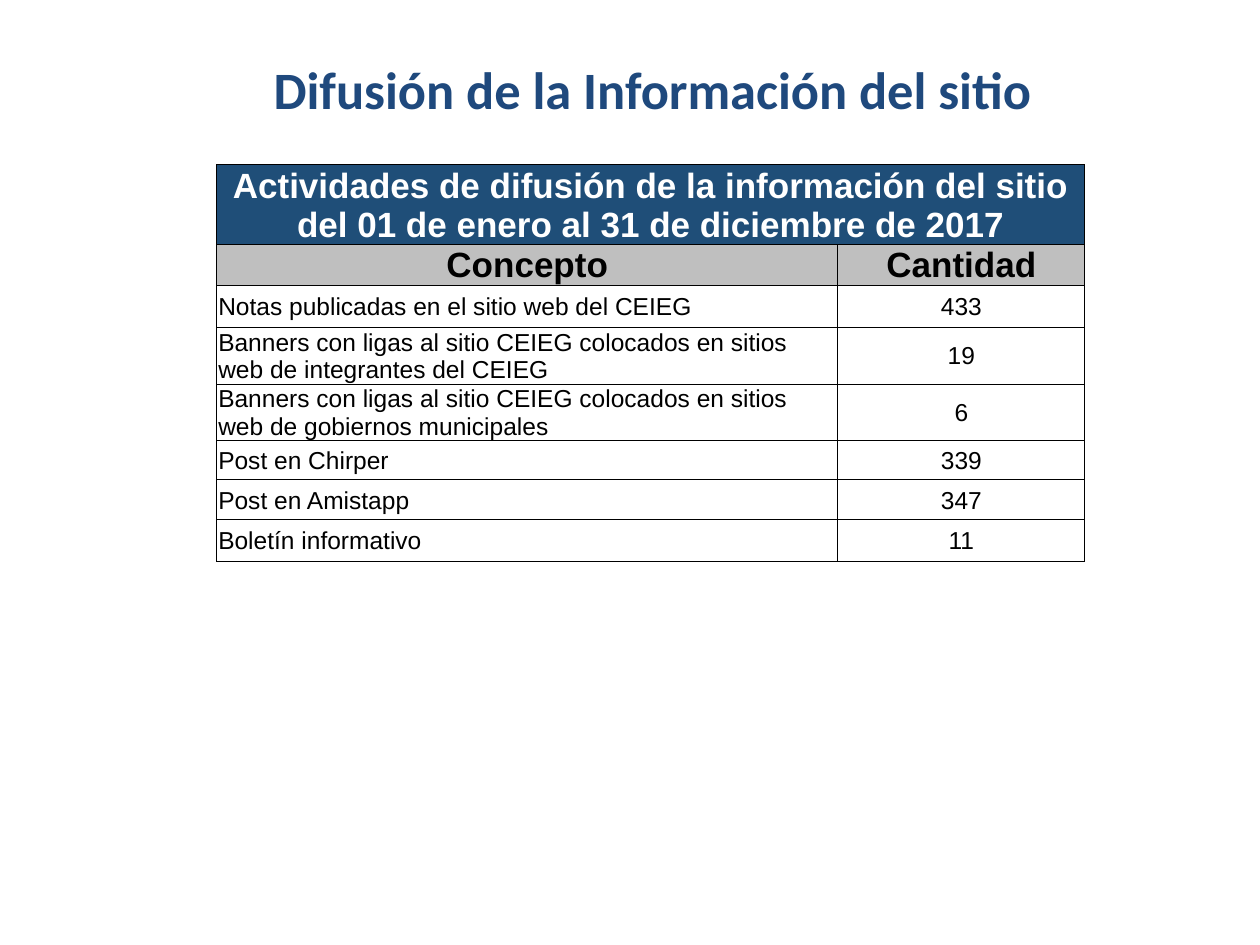
from pptx import Presentation
from pptx.dml.color import RGBColor
from pptx.enum.text import MSO_ANCHOR as Anchor, PP_ALIGN as Align
from pptx.oxml.ns import qn
from pptx.util import Cm, Pt
from lxml.etree import SubElement

NAVY = RGBColor(0x1F, 0x49, 0x7D)
HEADER_BLUE = RGBColor(0x1F, 0x4E, 0x78)
GREY = RGBColor(0xBF, 0xBF, 0xBF)
WHITE = RGBColor(0xFF, 0xFF, 0xFF)
BLACK = RGBColor(0, 0, 0)

HEADING = ("Actividades de difusión de la información del sitio "
           "del 01 de enero al 31 de diciembre de 2017")
COLUMN_NAMES = ("Concepto", "Cantidad")
ACTIVITIES = [
    ("Notas publicadas en el sitio web del CEIEG", "433"),
    ("Banners con ligas al sitio CEIEG colocados en sitios "
     "web de integrantes del CEIEG", "19"),
    ("Banners con ligas al sitio CEIEG colocados en sitios "
     "web de gobiernos municipales", "6"),
    ("Post en Chirper", "339"),
    ("Post en Amistapp", "347"),
    ("Boletín informativo", "11"),
]
COLUMN_WIDTHS = (12.52, 4.98)
ROW_HEIGHTS = (1.61, 0.81, 0.85, 1.13, 1.13, 0.79, 0.81, 0.83)


def set_font(para, name, size, color, bold):
    font = para.font
    font.name, font.size, font.bold = name, Pt(size), bold
    font.color.rgb = color


def add_title(page, text):
    box = page.shapes.add_textbox(Cm(2.15), Cm(0.91), Cm(22.02), Cm(1.75))
    frame = box.text_frame
    frame.word_wrap = True
    frame.vertical_anchor = Anchor.MIDDLE
    para = frame.paragraphs[0]
    para.text = text
    para.alignment = Align.CENTER
    set_font(para, "Calibri", 30, NAVY, True)


def add_borders(cell):
    properties = cell._tc.get_or_add_tcPr()
    for side in ("a:lnL", "a:lnR", "a:lnT", "a:lnB"):
        line = SubElement(properties, qn(side), w=str(Pt(0.5)))
        fill = SubElement(line, qn("a:solidFill"))
        SubElement(fill, qn("a:srgbClr"), val=str(BLACK))


def fill_cell(cell, text, size=14, color=BLACK, bold=False, fill=None,
              align=Align.CENTER, anchor=Anchor.MIDDLE):
    cell.margin_left = cell.margin_right = cell.margin_top = Cm(0.03)
    cell.margin_bottom = 0
    cell.vertical_anchor = anchor
    para = cell.text_frame.paragraphs[0]
    para.text = text
    para.alignment = align
    set_font(para, "Arial", size, color, bold)
    if fill is None:
        cell.fill.background()
    else:
        cell.fill.solid()
        cell.fill.fore_color.rgb = fill


def add_activity_table(page):
    frame = page.shapes.add_table(
        len(ROW_HEIGHTS), len(COLUMN_WIDTHS), Cm(4.37), Cm(3.32),
        Cm(sum(COLUMN_WIDTHS)), Cm(sum(ROW_HEIGHTS)))
    table = frame.table
    table.first_row = table.horz_banding = False
    for column, width in zip(table.columns, COLUMN_WIDTHS):
        column.width = Cm(width)
    for row, height in zip(table.rows, ROW_HEIGHTS):
        row.height = Cm(height)
    for cell in table.iter_cells():
        add_borders(cell)

    table.cell(0, 0).merge(table.cell(0, 1))
    fill_cell(table.cell(0, 0), HEADING, 20, WHITE, True, HEADER_BLUE,
              anchor=Anchor.BOTTOM)
    for index, name in enumerate(COLUMN_NAMES):
        fill_cell(table.cell(1, index), name, 20, bold=True, fill=GREY)
    for index, (concept, amount) in enumerate(ACTIVITIES, start=2):
        fill_cell(table.cell(index, 0), concept, align=Align.LEFT)
        fill_cell(table.cell(index, 1), amount)


def main():
    deck = Presentation()
    deck.slide_width, deck.slide_height = Cm(25.4), Cm(19.05)
    page = deck.slides.add_slide(deck.slide_layouts[6])
    add_activity_table(page)
    add_title(page, "Difusión de la Información del sitio")
    deck.save("out.pptx")


if __name__ == "__main__":
    main()
